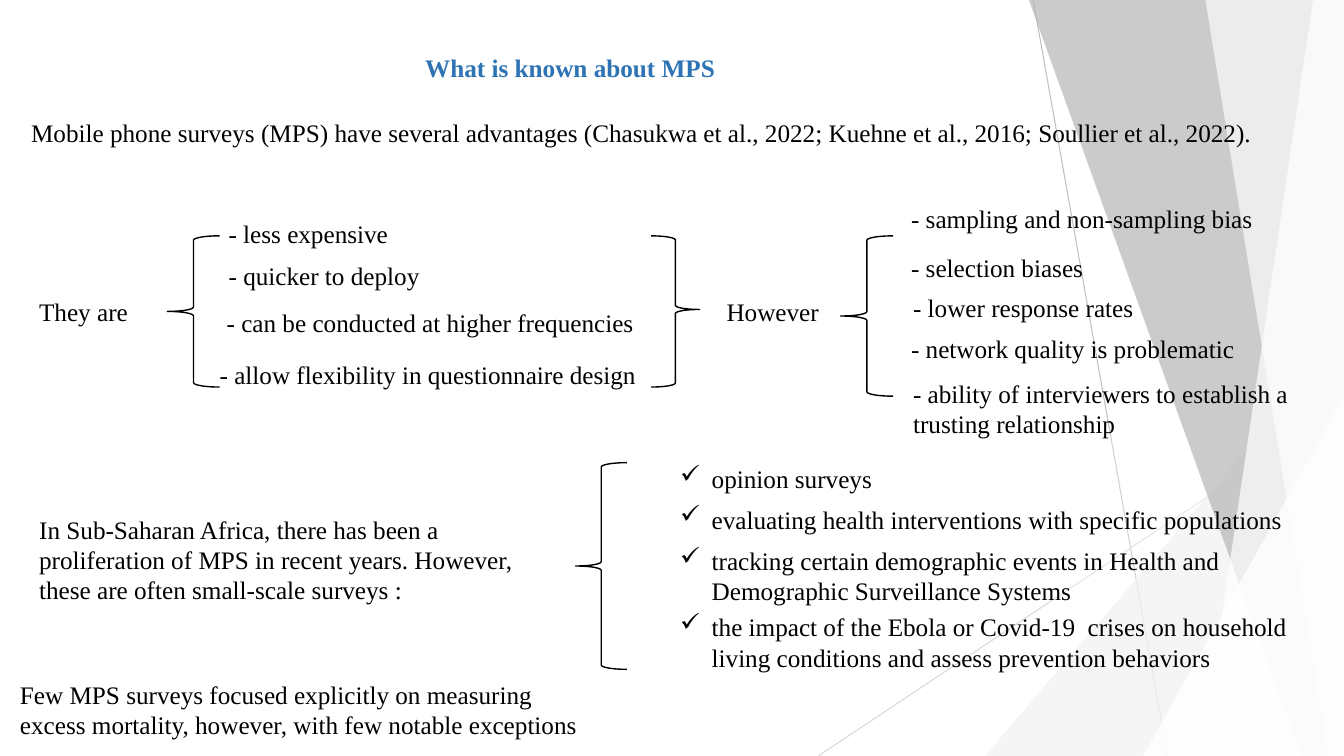
from lxml.etree import SubElement
from pptx import Presentation
from pptx.dml.color import RGBColor
from pptx.enum.shapes import MSO_CONNECTOR, MSO_SHAPE as SHAPE
from pptx.enum.text import MSO_ANCHOR, MSO_AUTO_SIZE as FIT
from pptx.oxml.ns import qn
from pptx.util import Pt

W, H = 960, 540
FONT, SIZE = "Times New Roman", 18
LINE_HEIGHT, INSET = 21.8, 3.6
BULLET_INDENT = 22.5
COLORS = {
    "title": "2E74B5", "text": "000000", "white": "FFFFFF",
    "pale": "F2F2F2", "gray": "B5B5B5", "steep": "BFBFBF", "flat": "D9D9D9",
}

BACK_LINES = [("steep", 738, 0, 834, H), ("flat", W, 290, 584.5, H)]
FACETS_BEHIND = [("white", 30, 884, 723), ("white", 20, 756, 852)]
FACETS_FRONT = [("gray", 70, 735, 929.5), ("white", 70, 938, 858), ("white", 65, 861, 949)]
BACK_TRIANGLE = ("pale", 72, 703.5, 240)
FRONT_TRIANGLE = ("white", 80, 816.5, 283)

TITLE = ("What is known about MPS", 296.6, 33.8, 228)
LABELS = [
    ("They are", 20.9, 208, 83.5),
    ("However", 511.9, 208, 81.4),
]
ADVANTAGES = [
    ("- less expensive", 156.2, 152.6, 129.6),
    ("- quicker to deploy", 156.2, 182.2, 152.6),
    ("- can be conducted at higher frequencies", 154.8, 216, 308),
    ("- allow flexibility in questionnaire design", 149.8, 253.4, 314.6),
]
LIMITS = [
    ("- sampling and non-sampling bias", 643.7, 141.8, 260.6),
    ("- selection biases", 643.7, 176.4, 143.3),
    ("- lower response rates", 645.1, 205.2, 177.8),
    ("- network quality is problematic", 643.7, 234.7, 247.7),
]
PARAGRAPHS = [
    ("Mobile phone surveys (MPS) have several advantages (Chasukwa et al., 2022; "
     "Kuehne et al., 2016; Soullier et al., 2022).", 15.1, 80.6, 914.4, 1),
    ("- ability of interviewers to establish a trusting relationship", 645.1, 266.4, 318.2, 2),
    ("In Sub-Saharan Africa, there has been a proliferation of MPS in recent years. "
     "However, these are often small-scale surveys :", 20.9, 363.6, 359.3, 3),
    ("Few MPS surveys focused explicitly on measuring excess mortality, however, "
     "with few notable exceptions", 7.2, 481.7, 419.8, 2),
]
SURVEYS_LEFT, SURVEYS_WIDTH = 478.8, 480.2
SURVEYS = [
    ("opinion surveys", 327.6, 1),
    ("evaluating health interventions with specific populations", 356.4, 1),
    ("tracking certain demographic events in Health and "
     "Demographic Surveillance Systems", 385.9, 2),
    ("the impact of the Ebola or Covid-19  crises on household "
     "living conditions and assess prevention behaviors", 433.4, 2),
]
BRACES = [
    (SHAPE.LEFT_BRACE, 119.5, 168.5, 37.4, 108, 0.5),
    (SHAPE.RIGHT_BRACE, 465.1, 168.5, 34.6, 108, 0.487),
    (SHAPE.LEFT_BRACE, 600.5, 168.5, 37.4, 114.5, 0.5),
    (SHAPE.LEFT_BRACE, 411.1, 330.5, 36.7, 147.6, 0.5),
]


def rgb(name):
    return RGBColor.from_string(COLORS[name])


def paint(sp, color, opacity):
    sp.shadow.inherit = False
    sp.line.fill.background()
    sp.fill.solid()
    sp.fill.fore_color.rgb = rgb(color)
    clr = sp.fill._xPr.find(".//" + qn("a:srgbClr"))
    SubElement(clr, qn("a:alpha"), val=str(opacity * 1000))


def add_back_line(s, color, x1, y1, x2, y2):
    line = s.shapes.add_connector(MSO_CONNECTOR.STRAIGHT, Pt(x1), Pt(y1), Pt(x2), Pt(y2))
    line.line.color.rgb = rgb(color)
    line.line.width = Pt(0.75)
    SubElement(line._element.spPr, qn("a:effectLst"))


def add_facet(s, color, opacity, top_x, bottom_x):
    outline = s.shapes.build_freeform(Pt(top_x), 0)
    corners = [(W, 0), (W, H), (bottom_x, H)]
    outline.add_line_segments([(Pt(x), Pt(y)) for x, y in corners], close=True)
    paint(outline.convert_to_shape(), color, opacity)


def add_corner_triangle(s, color, opacity, x, y):
    sp = s.shapes.add_shape(SHAPE.ISOSCELES_TRIANGLE, Pt(x), Pt(y), Pt(W - x), Pt(H - y))
    sp.adjustments[0] = 1
    paint(sp, color, opacity)


def add_text(s, text, x, y, w, lines=1, wrap=False, color="text", bold=False, bullet=None):
    h = lines * LINE_HEIGHT + 2 * INSET
    tf = s.shapes.add_textbox(Pt(x), Pt(y), Pt(w), Pt(h)).text_frame
    tf.word_wrap = wrap
    tf.auto_size = FIT.SHAPE_TO_FIT_TEXT
    tf.vertical_anchor = MSO_ANCHOR.TOP
    p = tf.paragraphs[0]
    if bullet:
        pPr = p._p.get_or_add_pPr()
        pPr.set("marL", str(Pt(BULLET_INDENT)))
        pPr.set("indent", str(-Pt(BULLET_INDENT)))
        SubElement(pPr, qn("a:buChar"), char=bullet)
    r = p.add_run()
    r.text = text
    r.font.name = FONT
    r.font.size = Pt(SIZE)
    r.font.bold = bold
    r.font.color.rgb = rgb(color)


def add_brace(s, kind, x, y, w, h, tip):
    sp = s.shapes.add_shape(kind, Pt(x), Pt(y), Pt(w), Pt(h))
    sp.adjustments[1] = tip
    sp.shadow.inherit = False
    sp.fill.background()
    sp.line.color.rgb = rgb("text")
    sp.line.width = Pt(1)


def main():
    prs = Presentation()
    prs.slide_width, prs.slide_height = Pt(W), Pt(H)
    s = prs.slides.add_slide(prs.slide_layouts[6])

    for line in BACK_LINES:
        add_back_line(s, *line)
    for facet in FACETS_BEHIND:
        add_facet(s, *facet)
    add_corner_triangle(s, *BACK_TRIANGLE)
    for facet in FACETS_FRONT:
        add_facet(s, *facet)
    add_corner_triangle(s, *FRONT_TRIANGLE)

    add_text(s, *TITLE, color="title", bold=True)
    for item in LABELS + ADVANTAGES + LIMITS:
        add_text(s, *item)
    for paragraph in PARAGRAPHS:
        add_text(s, *paragraph, wrap=True)
    for text, y, lines in SURVEYS:
        add_text(s, text, SURVEYS_LEFT, y, SURVEYS_WIDTH, lines, wrap=True, bullet="✓")
    for brace in BRACES:
        add_brace(s, *brace)

    prs.save("out.pptx")


if __name__ == "__main__":
    main()
